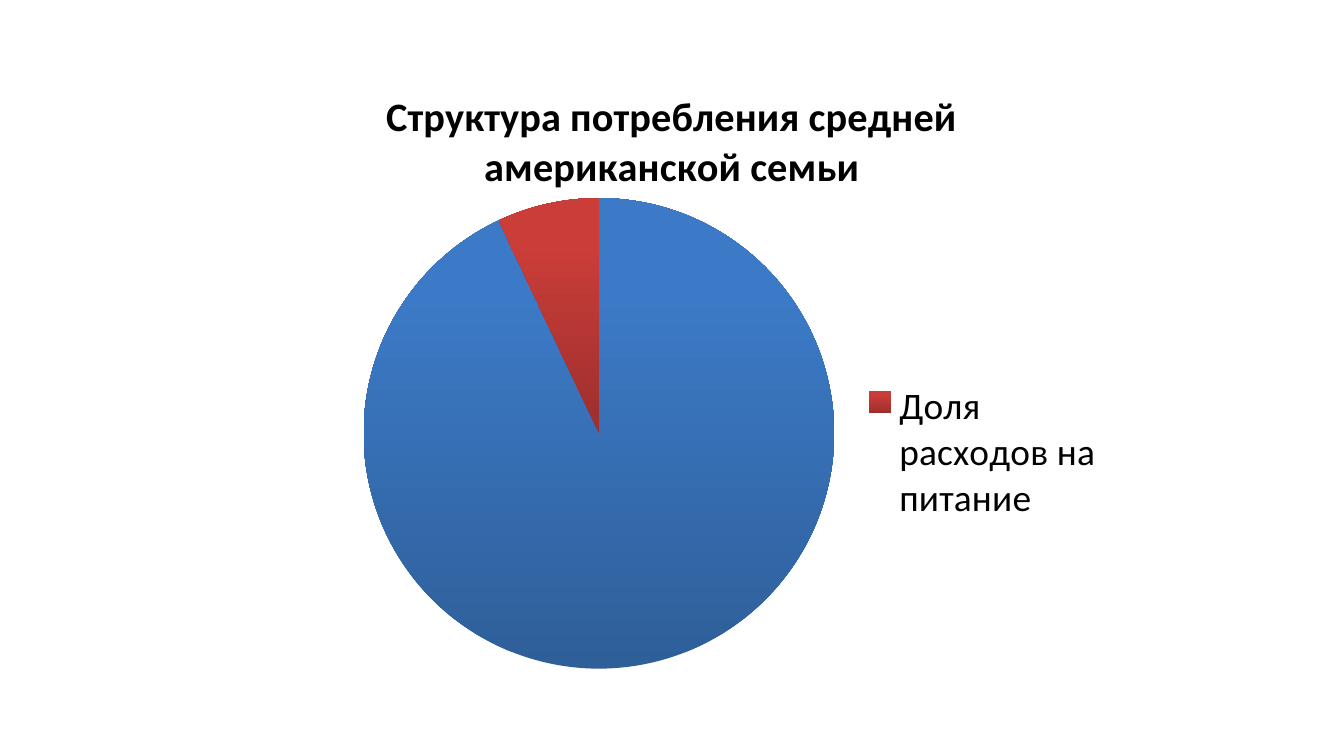
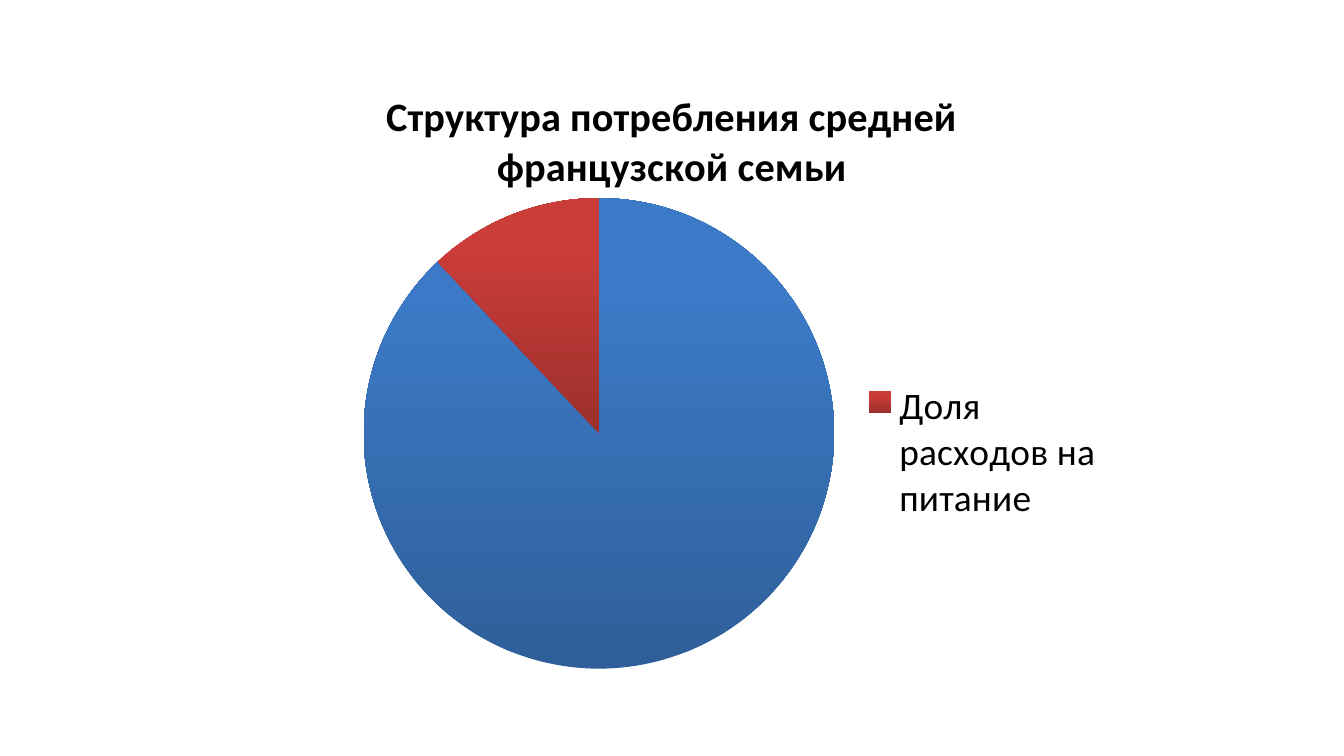
from dataclasses import dataclass

from lxml.etree import SubElement
from pptx import Presentation
from pptx.chart.chart import Chart
from pptx.chart.data import CategoryChartData
from pptx.dml.color import RGBColor
from pptx.enum.chart import XL_CHART_TYPE, XL_LEGEND_POSITION
from pptx.oxml import parse_xml
from pptx.oxml.ns import nsdecls, qn
from pptx.util import Inches, Pt


@dataclass(frozen=True)
class Theme:
    font: str = "Calibri"
    text: RGBColor = RGBColor(0x00, 0x00, 0x00)
    slices: tuple[RGBColor, ...] = (
        RGBColor(0x4F, 0x81, 0xBD),
        RGBColor(0xC0, 0x50, 0x4D),
    )
    body_size: float = 18
    title_size: float = 21.6
    legend_size: float = 20


@dataclass(frozen=True)
class FamilyBudget:
    title: str
    food_share: int


THEME = Theme()
CATEGORIES = ("", "Доля расходов на питание")
BUDGETS = (
    FamilyBudget("Структура потребления средней американской семьи", 7),
    FamilyBudget("Структура потребления средней французской семьи", 12),
)
PAGE_WIDTH = Inches(10)
PAGE_HEIGHT = PAGE_WIDTH * 9 // 16
CHART_WIDTH, CHART_HEIGHT = Inches(6.67), Inches(4.58)
CHART_LEFT, CHART_TOP = (PAGE_WIDTH - CHART_WIDTH) // 2, Inches(0.45)
# Fractions of the chart
PLOT_LAYOUT = {"x": 0.156, "y": 0.212, "w": 0.525, "h": 0.788}
LEGEND_LAYOUT = {"x": 0.706, "y": 0.512, "w": 0.28, "h": 0.25}
# Position of each gradient stop and the shade of the slice colour there
GRADIENT_SHADES = ((0, 51000), (0.8, 93000))
SATURATION = 130000


def style_font(font, size: float, bold: bool = False) -> None:
    values = {"name": THEME.font, "size": Pt(size), "bold": bold}
    for name, value in values.items():
        setattr(font, name, value)
    font.color.rgb = THEME.text


def manual_layout(fractions: dict[str, float], target: str = ""):
    settings = {"layoutTarget": target} if target else {}
    settings |= {"xMode": "edge", "yMode": "edge"} | fractions
    tags = "".join(f'<c:{name} val="{value}"/>' for name, value in settings.items())
    return parse_xml(
        f'<c:layout {nsdecls("c")}><c:manualLayout>{tags}</c:manualLayout></c:layout>')


def remove_layout(parent) -> None:
    for layout in parent.findall(qn("c:layout")):
        parent.remove(layout)


def place_plot(chart: Chart) -> None:
    plot_area = chart.plots[0]._element.getparent()
    remove_layout(plot_area)
    plot_area.insert(0, manual_layout(PLOT_LAYOUT, "inner"))


def shade_slices(chart: Chart) -> None:
    """Fill each slice with its colour, darkening towards the bottom."""
    series = chart.plots[0].series[0]
    for index, color in enumerate(THEME.slices):
        fill = series.points[index].format.fill
        fill.gradient()
        fill.gradient_angle = 90
        for stop, (position, _) in zip(fill.gradient_stops, GRADIENT_SHADES):
            stop.position = position
            stop.color.rgb = color
    for point in series._element.findall(qn("c:dPt")):
        for color, (_, shade) in zip(point.iter(qn("a:srgbClr")), GRADIENT_SHADES):
            SubElement(color, qn("a:shade"), val=str(shade))
            SubElement(color, qn("a:satMod"), val=str(SATURATION))


def add_legend(chart: Chart) -> None:
    """Show a legend on the right without the unnamed first slice."""
    chart.has_legend = True
    legend = chart.legend
    legend.position = XL_LEGEND_POSITION.RIGHT
    legend.include_in_layout = False
    style_font(legend.font, THEME.legend_size)
    remove_layout(legend._element)
    hidden_entry = parse_xml(
        f'<c:legendEntry {nsdecls("c")}><c:idx val="0"/><c:delete val="1"/></c:legendEntry>')
    legend._element.find(qn("c:legendPos")).addnext(hidden_entry)
    hidden_entry.addnext(manual_layout(LEGEND_LAYOUT))


def add_budget_page(deck, budget: FamilyBudget) -> None:
    page = deck.slides.add_slide(deck.slide_layouts[6])
    data = CategoryChartData()
    data.categories = CATEGORIES
    data.add_series(budget.title, (100 - budget.food_share, budget.food_share))
    chart = page.shapes.add_chart(
        XL_CHART_TYPE.PIE, CHART_LEFT, CHART_TOP, CHART_WIDTH, CHART_HEIGHT, data).chart
    style_font(chart.font, THEME.body_size)

    chart.has_title = True
    title = chart.chart_title.text_frame
    title.text = budget.title
    style_font(title.paragraphs[0].runs[0].font, THEME.title_size, bold=True)

    chart.plots[0].vary_by_categories = True
    place_plot(chart)
    shade_slices(chart)
    add_legend(chart)


def main() -> None:
    deck = Presentation()
    deck.slide_width = PAGE_WIDTH
    deck.slide_height = PAGE_HEIGHT
    for budget in BUDGETS:
        add_budget_page(deck, budget)
    deck.save("out.pptx")


if __name__ == "__main__":
    main()
